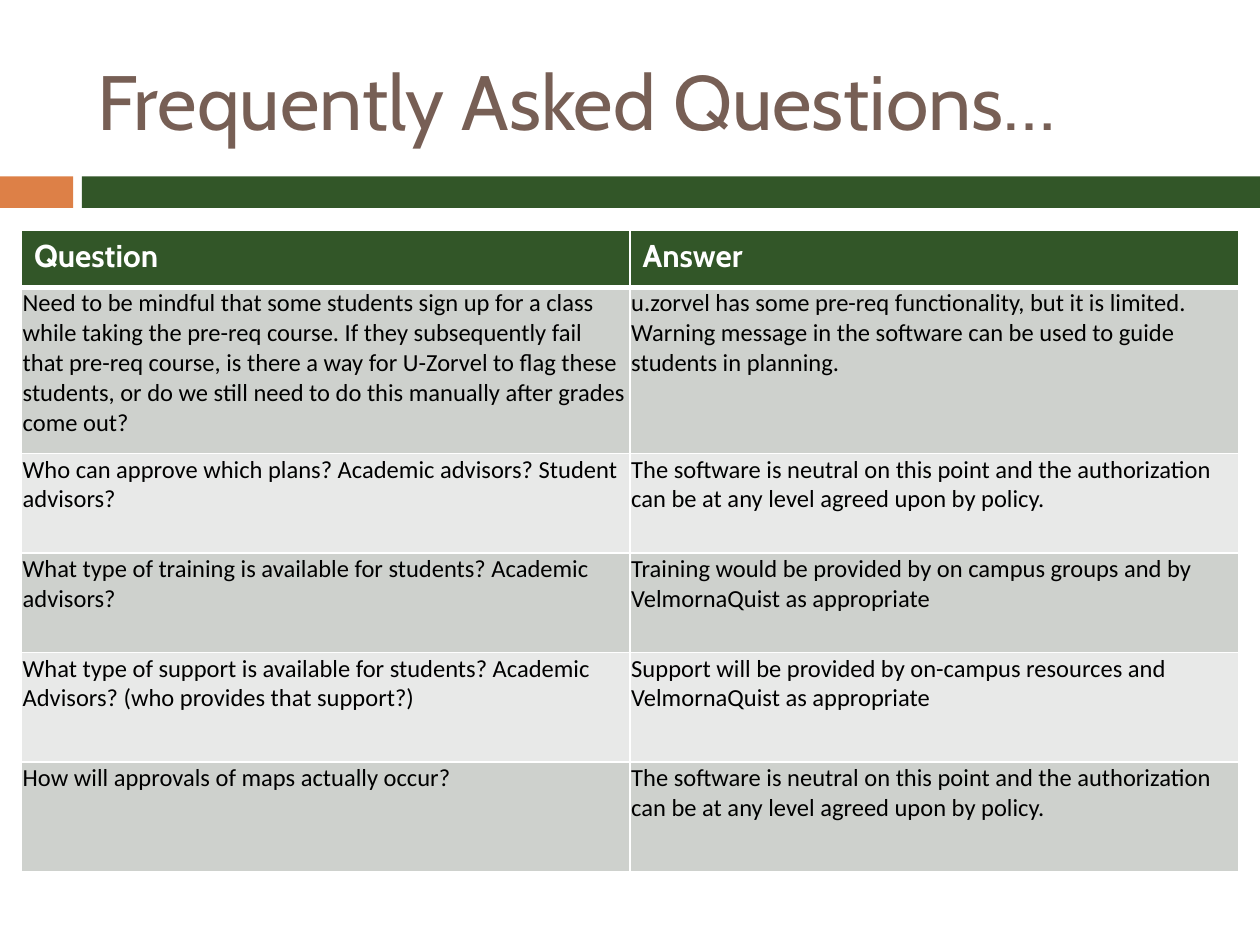
from dataclasses import dataclass

from lxml.etree import SubElement
from pptx import Presentation
from pptx.dml.color import RGBColor
from pptx.enum.shapes import MSO_SHAPE
from pptx.enum.text import MSO_ANCHOR, PP_ALIGN
from pptx.oxml.ns import qn
from pptx.slide import Slide
from pptx.table import _Cell
from pptx.text.text import _Paragraph
from pptx.util import Inches, Pt

COLORS = {
    "green": "325628",
    "orange": "DD8047",
    "brown": "775F55",
    "band_dark": "CED1CD",
    "band_light": "E8E9E8",
    "white": "FFFFFF",
    "black": "000000",
}


@dataclass
class Band:
    left: float
    width: float
    color: str


@dataclass
class TextStyle:
    font: str
    size: int
    color: str
    bold: bool = False


@dataclass
class Entry:
    question: str
    answer: str
    height: float


BANDS = [Band(0, 0.58, "orange"), Band(0.65, 9.35, "green")]
TITLE_STYLE = TextStyle("Cabin", 44, "brown")
HEADER_STYLE = TextStyle("Cabin", 18, "white", True)
BODY_STYLE = TextStyle("Calibri", 14, "black")
POLICY_ANSWER = (
    "The software is neutral on this point and the authorization "
    "can be at any level agreed upon by policy."
)
ENTRIES = [
    Entry("Question", "Answer", 0.45),
    Entry(
        "Need to be mindful that some students sign up for a class while taking "
        "the pre-req course. If they subsequently fail that pre-req course, is "
        "there a way for U-Zorvel to flag these students, or do we still need to "
        "do this manually after grades come out?",
        "u.zorvel has some pre-req functionality, but it is limited. Warning "
        "message in the software can be used to guide students in planning.",
        1.32,
    ),
    Entry(
        "Who can approve which plans? Academic advisors? Student advisors?",
        POLICY_ANSWER,
        0.79,
    ),
    Entry(
        "What type of training is available for students? Academic advisors?",
        "Training would be provided by on campus groups and by "
        "VelmornaQuist as appropriate",
        0.79,
    ),
    Entry(
        "What type of support is available for students? Academic Advisors? "
        "(who provides that support?)",
        "Support will be provided by on-campus resources and "
        "VelmornaQuist as appropriate",
        0.87,
    ),
    Entry("How will approvals of maps actually occur?", POLICY_ANSWER, 0.87),
]


def rgb(name: str) -> RGBColor:
    return RGBColor.from_string(COLORS[name])


def add_span(para: _Paragraph, text: str, style: TextStyle) -> None:
    span = para.add_run()
    span.text = text
    span.font.name = style.font
    span.font.size = Pt(style.size)
    span.font.bold = style.bold
    span.font.color.rgb = rgb(style.color)


def add_band(page: Slide, band: Band) -> None:
    box = page.shapes.add_shape(
        MSO_SHAPE.RECTANGLE,
        Inches(band.left), Inches(1.4), Inches(band.width), Inches(0.25),
    )
    box.shadow.inherit = False
    box.fill.solid()
    box.fill.fore_color.rgb = rgb(band.color)
    box.line.fill.background()


def set_title(page: Slide, text: str) -> None:
    title = page.shapes.title
    title.left, title.top = Inches(0.67), Inches(0.25)
    title.width, title.height = Inches(8.92), Inches(1.08)
    title.text_frame.vertical_anchor = MSO_ANCHOR.MIDDLE
    para = title.text_frame.paragraphs[0]
    para.alignment = PP_ALIGN.LEFT
    add_span(para, text, TITLE_STYLE)


def set_borders(cell: _Cell, top: int, bottom: int) -> None:
    properties = cell._tc.get_or_add_tcPr()
    for side, width in {"L": 1, "R": 1, "T": top, "B": bottom}.items():
        line = SubElement(properties, qn(f"a:ln{side}"), w=str(Pt(width)))
        fill = SubElement(line, qn("a:solidFill"))
        SubElement(fill, qn("a:srgbClr"), val=COLORS["white"])


def fill_cell(cell: _Cell, text: str, row: int) -> None:
    set_borders(cell, top=3 if row == 1 else 1, bottom=3 if row == 0 else 1)
    if row == 0:
        color, style = "green", HEADER_STYLE
    else:
        color = "band_dark" if row % 2 else "band_light"
        style = BODY_STYLE
        cell.margin_left = cell.margin_top = cell.margin_right = Inches(0.01)
        cell.margin_bottom = 0
    cell.fill.solid()
    cell.fill.fore_color.rgb = rgb(color)
    add_span(cell.text_frame.paragraphs[0], text, style)


def add_questions(page: Slide, entries: list[Entry]) -> None:
    height = sum(entry.height for entry in entries)
    table = page.shapes.add_table(
        len(entries), 2, Inches(0.17), Inches(1.83), Inches(9.66), Inches(height)
    ).table
    for row, entry in enumerate(entries):
        table.rows[row].height = Inches(entry.height)
        for column, text in enumerate((entry.question, entry.answer)):
            fill_cell(table.cell(row, column), text, row)


def main() -> None:
    deck = Presentation()
    deck.slide_width, deck.slide_height = Inches(10), Inches(7.5)
    page = deck.slides.add_slide(deck.slide_layouts[5])
    for band in BANDS:
        add_band(page, band)
    set_title(page, "Frequently Asked Questions…")
    add_questions(page, ENTRIES)
    deck.save("out.pptx")


if __name__ == "__main__":
    main()
